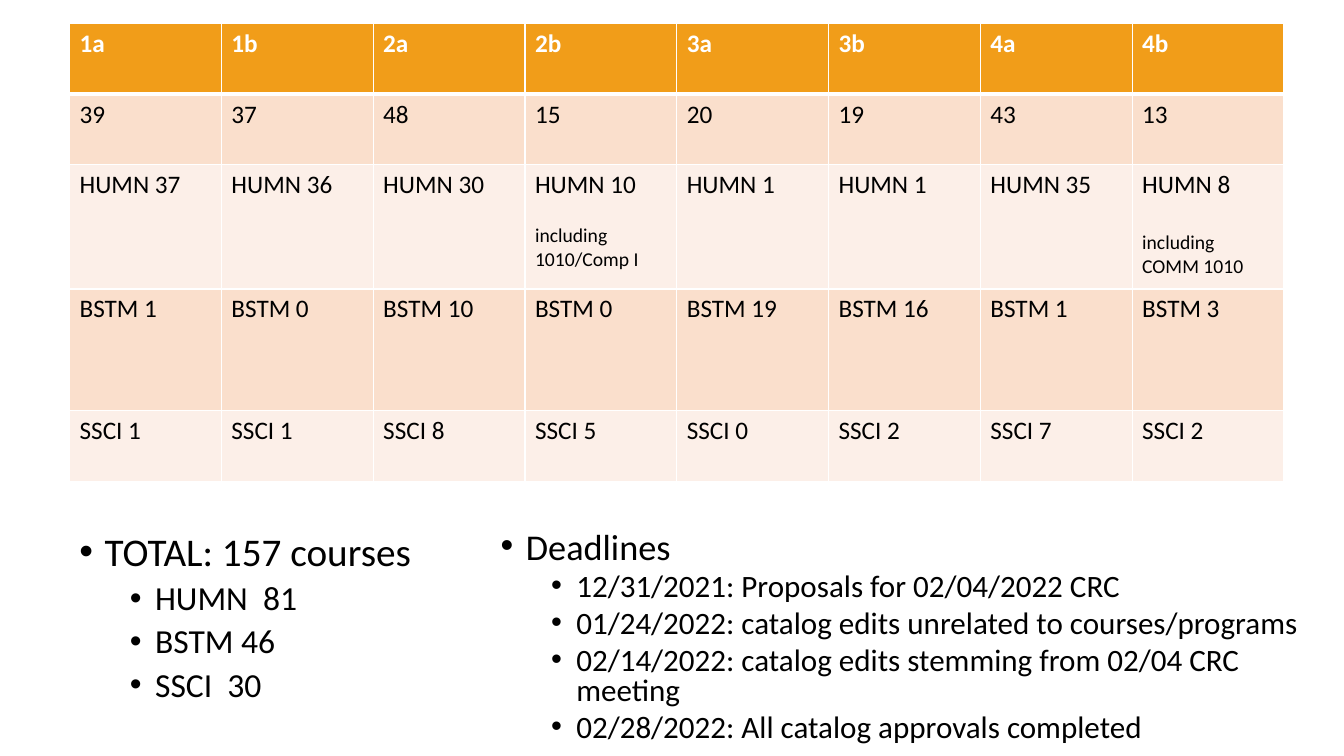
from pptx import Presentation
from pptx.dml.color import RGBColor
from pptx.oxml.ns import qn
from pptx.util import Pt
from lxml.etree import SubElement

TERMS = ["1a", "1b", "2a", "2b", "3a", "3b", "4a", "4b"]
COURSE_COUNTS = [39, 37, 48, 15, 20, 19, 43, 13]
DEPARTMENTS = {
    "HUMN": [37, 36, 30, 10, 1, 1, 35, 8],
    "BSTM": [1, 0, 10, 0, 19, 16, 1, 3],
    "SSCI": [1, 1, 8, 5, 0, 2, 7, 2],
}
CELL_NOTES = {
    (2, 3): ("including 1010/Comp I", 17),
    (2, 7): ("including COMM 1010", 22),
}
TOTALS = ["TOTAL: 157 courses", "HUMN  81", "BSTM 46", "SSCI  30"]
DEADLINES = [
    "Deadlines",
    "12/31/2021: Proposals for 02/04/2022 CRC",
    "01/24/2022: catalog edits unrelated to courses/programs",
    "02/14/2022: catalog edits stemming from 02/04 CRC meeting",
    "02/28/2022: All catalog approvals completed",
]

THEME = {
    "font": "Calibri",
    "text": "000000",
    "header_text": "FFFFFF",
    "header_fill": "F19D19",
    "band_fills": ["FADFCC", "FCEFE8"],
    "border": "FFFFFF",
    "cell_size": 18,
    "note_size": 14,
    "totals_sizes": (28, 24),
    "deadline_sizes": (25.9, 22.2),
}

TABLE_LEFT, TABLE_TOP, TABLE_WIDTH = 49.7, 16.8, 867.6
ROW_HEIGHTS = [50.4, 50.4, 88.8, 87, 50.4]
LISTS = [
    (TOTALS, (49.7, 376.6, 430.6, 153.4), THEME["totals_sizes"], 0.9),
    (DEADLINES, (350.6, 376.6, 591.8, 163.4), THEME["deadline_sizes"], 0.8),
]


def style_paragraph(paragraph, size, color=THEME["text"], bold=False):
    for run in paragraph.runs:
        run.font.name = THEME["font"]
        run.font.size = Pt(size)
        run.font.bold = bold
        run.font.color.rgb = RGBColor.from_string(color)


def set_borders(cell, widths):
    properties = cell._tc.get_or_add_tcPr()
    for position, (side, width) in enumerate(widths.items()):
        line = properties.makeelement(qn(f"a:{side}"), {"w": str(Pt(width))})
        fill = SubElement(line, qn("a:solidFill"))
        SubElement(fill, qn("a:srgbClr"), val=THEME["border"])
        properties.insert(position, line)


def add_course_table(slide):
    rows = [TERMS, COURSE_COUNTS]
    rows += [[f"{name} {count}" for count in counts] for name, counts in DEPARTMENTS.items()]
    table = slide.shapes.add_table(
        len(rows), len(TERMS), Pt(TABLE_LEFT), Pt(TABLE_TOP),
        Pt(TABLE_WIDTH), Pt(sum(ROW_HEIGHTS))).table
    for column in table.columns:
        column.width = Pt(TABLE_WIDTH / len(TERMS))
    for row_index, values in enumerate(rows):
        table.rows[row_index].height = Pt(ROW_HEIGHTS[row_index])
        is_header = row_index == 0
        fill = THEME["header_fill"] if is_header else THEME["band_fills"][(row_index - 1) % 2]
        color = THEME["header_text"] if is_header else THEME["text"]
        borders = {"lnL": 1, "lnR": 1, "lnT": 1, "lnB": 3} if is_header else {"lnL": 1, "lnR": 1, "lnB": 1}
        for column_index, value in enumerate(values):
            cell = table.cell(row_index, column_index)
            cell.fill.solid()
            cell.fill.fore_color.rgb = RGBColor.from_string(fill)
            set_borders(cell, borders)
            cell.text_frame.text = str(value)
            style_paragraph(cell.text_frame.paragraphs[0], THEME["cell_size"], color, is_header)
            if (row_index, column_index) in CELL_NOTES:
                note, gap = CELL_NOTES[row_index, column_index]
                paragraph = cell.text_frame.add_paragraph()
                paragraph.text = note
                paragraph.space_before = Pt(gap)
                style_paragraph(paragraph, THEME["note_size"])


def add_bullet_list(slide, lines, box, sizes, line_spacing):
    text_frame = slide.shapes.add_textbox(*map(Pt, box)).text_frame
    text_frame.word_wrap = True
    text_frame.text = "\n".join(lines)
    for index, paragraph in enumerate(text_frame.paragraphs):
        level = min(index, 1)
        paragraph.level = level
        paragraph.line_spacing = line_spacing
        paragraph.space_before = Pt((10, 5)[level])
        style_paragraph(paragraph, sizes[level])
        properties = paragraph._p.get_or_add_pPr()
        properties.set("marL", str(Pt((18, 54)[level])))
        properties.set("indent", str(Pt(-18)))
        SubElement(properties, qn("a:buFont"), typeface="Arial")
        SubElement(properties, qn("a:buChar"), char="•")


def main():
    presentation = Presentation()
    presentation.slide_width = Pt(960)
    presentation.slide_height = Pt(540)
    slide = presentation.slides.add_slide(presentation.slide_layouts[6])
    add_course_table(slide)
    for bullet_list in LISTS:
        add_bullet_list(slide, *bullet_list)
    presentation.save("out.pptx")


if __name__ == "__main__":
    main()
